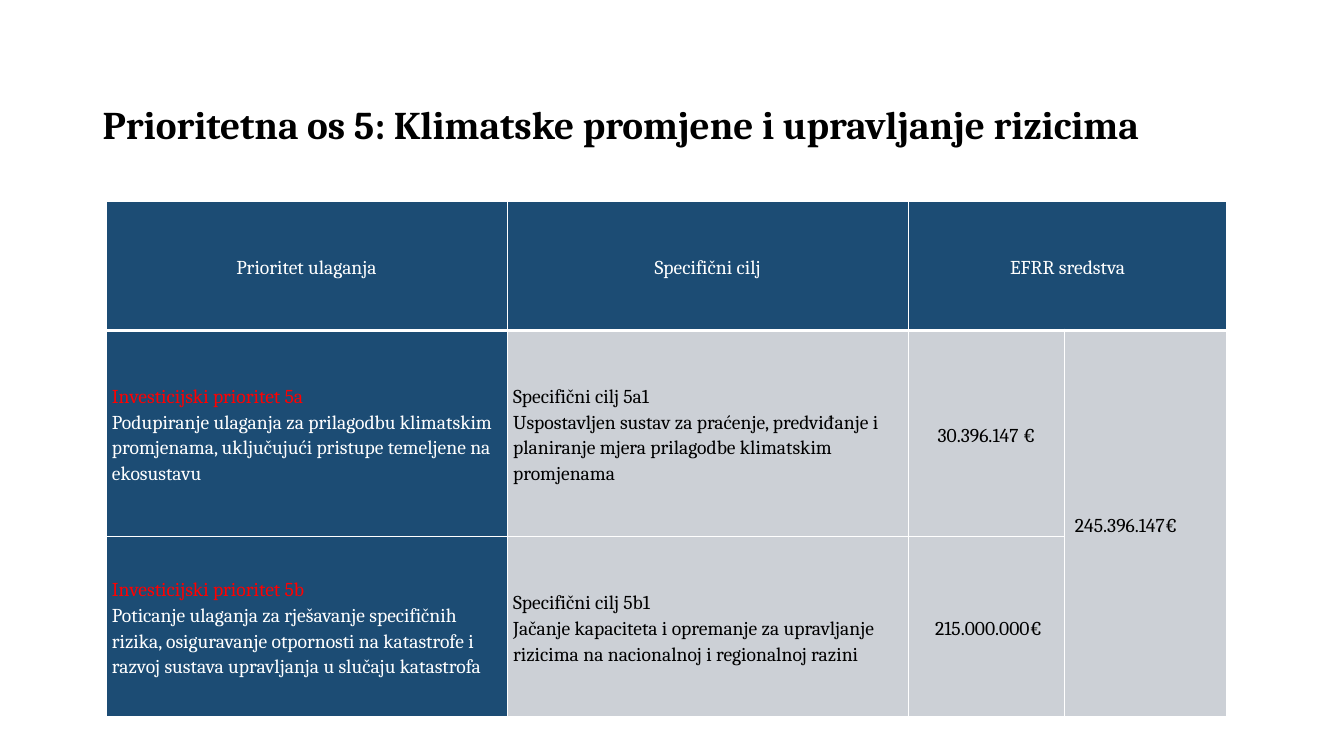
from lxml.etree import SubElement as Sub
from pptx import Presentation
from pptx.dml.color import RGBColor
from pptx.enum.text import MSO_ANCHOR as Anchor, PP_ALIGN as Align
from pptx.oxml.ns import qn
from pptx.util import Cm, Pt

WHITE, BLACK, RED, NAVY, GREY = "FFFFFF", "000000", "FF0000", "1C4C74", "CCD0D6"


def color(code):
    return RGBColor.from_string(code)


def apply(item, style):
    for name, value in style.items():
        setattr(item, name, value)


class Deck:
    font = {"name": "Cambria", "size": Pt(14)}
    head = {"size": Pt(28), "bold": True}
    frame = {"word_wrap": True, "vertical_anchor": Anchor.MIDDLE}
    inset = {"margin_left": Cm(0.15), "margin_right": Cm(0.15),
             "margin_top": Cm(0.03), "margin_bottom": 0,
             "vertical_anchor": Anchor.MIDDLE}
    plain = {"first_row": False, "horz_banding": False}

    def __init__(self, wide, high):
        self.show = Presentation()
        apply(self.show, {"slide_width": Cm(wide), "slide_height": Cm(high)})
        self.slide = self.show.slides.add_slide(self.show.slide_layouts[6])

    def label(self, frame, lines, align=Align.LEFT, space=1.15, **style):
        for i, (text, code) in enumerate(lines):
            para = frame.add_paragraph() if i else frame.paragraphs[0]
            apply(para, {"alignment": align, "line_spacing": space})
            run = para.add_run()
            run.text = text
            apply(run.font, self.font | style)
            run.font.color.rgb = color(code)

    def title(self, text, left, top, wide, high):
        box = self.slide.shapes.add_textbox(Cm(left), Cm(top), Cm(wide), Cm(high))
        apply(box.text_frame, self.frame | {"margin_top": Cm(0.8)})
        self.label(box.text_frame, [(text, BLACK)], space=0.9, **self.head)

    def table(self, left, top, cols, rows):
        shape = self.slide.shapes.add_table(
            len(rows), len(cols), Cm(left), Cm(top), Cm(sum(cols)), Cm(sum(rows)))
        grid = shape.table
        apply(grid, self.plain)
        for col, wide in zip(grid.columns, cols):
            col.width = Cm(wide)
        for row, high in zip(grid.rows, rows):
            row.height = Cm(high)
        return grid

    def edge(self, cell, thick):
        props = cell._tc.get_or_add_tcPr()
        for side in "LRTB":
            line = Sub(props, qn(f"a:ln{side}"), w=str(Pt(thick.get(side, 1))))
            fill = Sub(line, qn("a:solidFill"))
            Sub(fill, qn("a:srgbClr"), val=WHITE)

    def cell(self, cell, lines, back, align, thick):
        apply(cell, self.inset)
        self.edge(cell, thick)
        cell.fill.solid()
        cell.fill.fore_color.rgb = color(back)
        self.label(cell.text_frame, lines, align)

    def save(self):
        self.show.save("out.pptx")


HEADS = ["Prioritet ulaganja", "Specifični cilj", "EFRR sredstva", ""]
GOALS = [
    ("Investicijski prioritet 5a",
     "Podupiranje ulaganja za prilagodbu klimatskim promjenama, "
     "uključujući pristupe temeljene na ekosustavu",
     "Specifični cilj 5a1",
     "Uspostavljen sustav za praćenje, predviđanje i planiranje mjera "
     "prilagodbe klimatskim promjenama",
     "30.396.147 €", " 245.396.147€"),
    ("Investicijski prioritet 5b",
     "Poticanje ulaganja za rješavanje specifičnih rizika, osiguravanje "
     "otpornosti na katastrofe i razvoj sustava upravljanja u slučaju katastrofa",
     "Specifični cilj 5b1",
     "Jačanje kapaciteta i opremanje za upravljanje rizicima "
     "na nacionalnoj i regionalnoj razini",
     " 215.000.000€", ""),
]


def lines(*pairs):
    return [pair for pair in pairs if pair[0]]


def main():
    deck = Deck(33.87, 19.05)
    deck.title("Prioritetna os 5: Klimatske promjene i upravljanje rizicima",
               2.34, 1.02, 29.21, 3.68)
    grid = deck.table(2.67, 5.08, [10.11, 10.11, 3.94, 4.09], [3.25, 5.18, 4.55])
    grid.cell(0, 2).merge(grid.cell(0, 3))
    grid.cell(1, 3).merge(grid.cell(2, 3))
    for col, text in enumerate(HEADS):
        deck.cell(grid.cell(0, col), lines((text, WHITE)), NAVY,
                  Align.CENTER, {"B": 3})
    for row, (name, aim, goal, note, part, total) in enumerate(GOALS, 1):
        cells = [
            (lines((name, RED), (aim, WHITE)), NAVY, Align.LEFT),
            (lines((goal, BLACK), (note, BLACK)), GREY, Align.LEFT),
            (lines((part, BLACK)), GREY, Align.CENTER),
            (lines((total, BLACK)), GREY, Align.LEFT),
        ]
        thick = {"T": 3} if row == 1 else {}
        for col, (text, back, align) in enumerate(cells):
            deck.cell(grid.cell(row, col), text, back, align, thick)
    deck.save()


if __name__ == "__main__":
    main()
